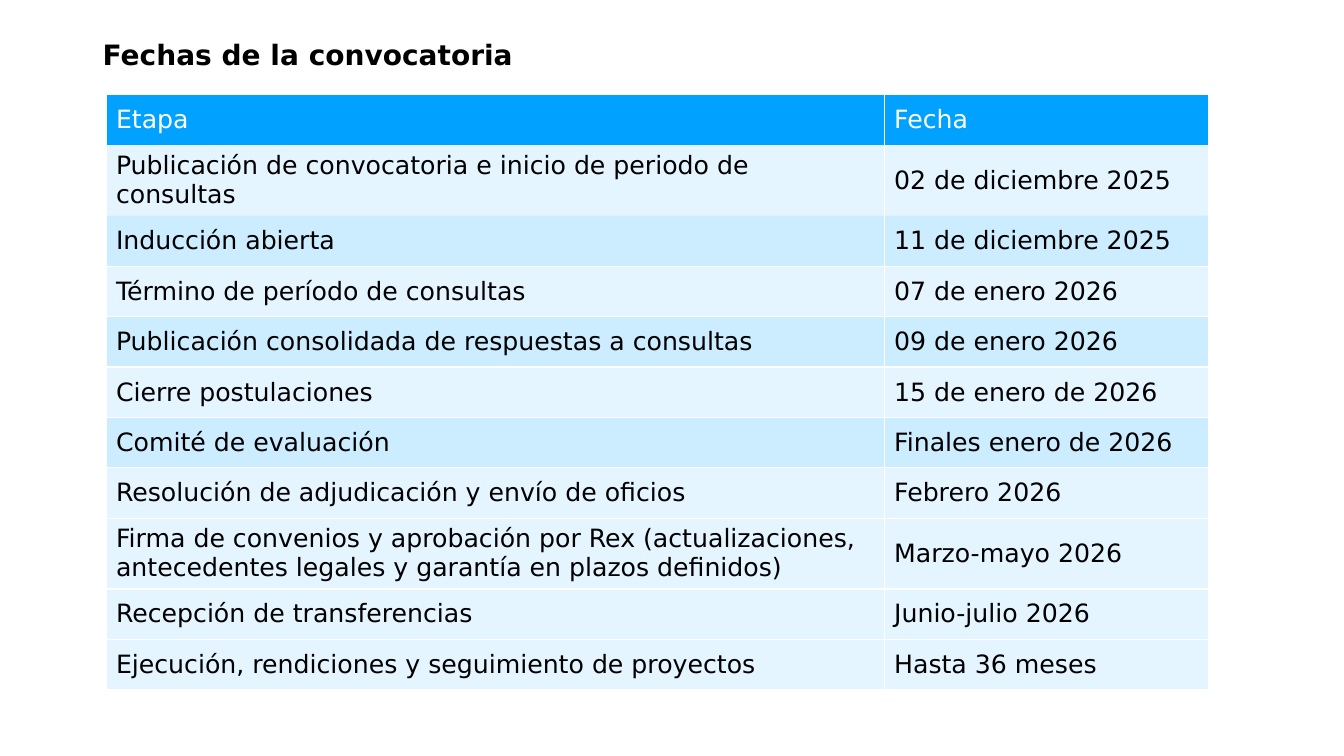
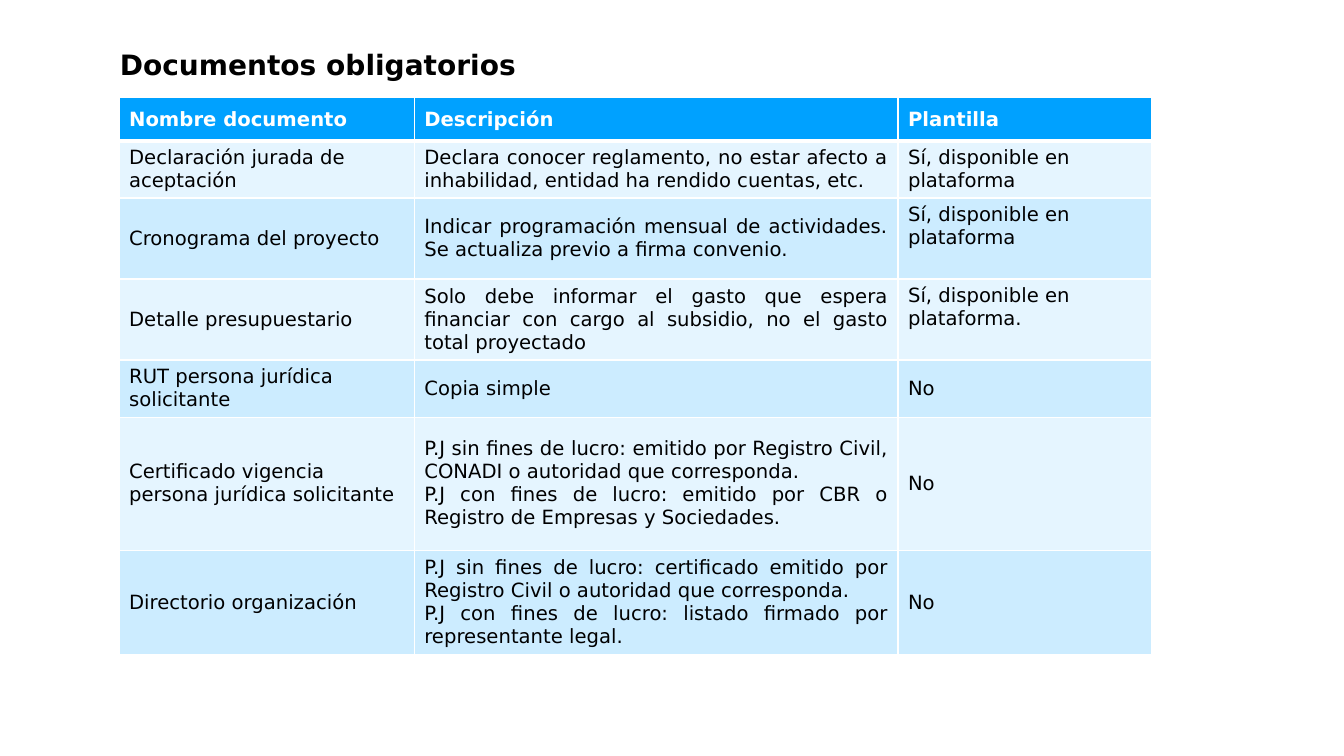
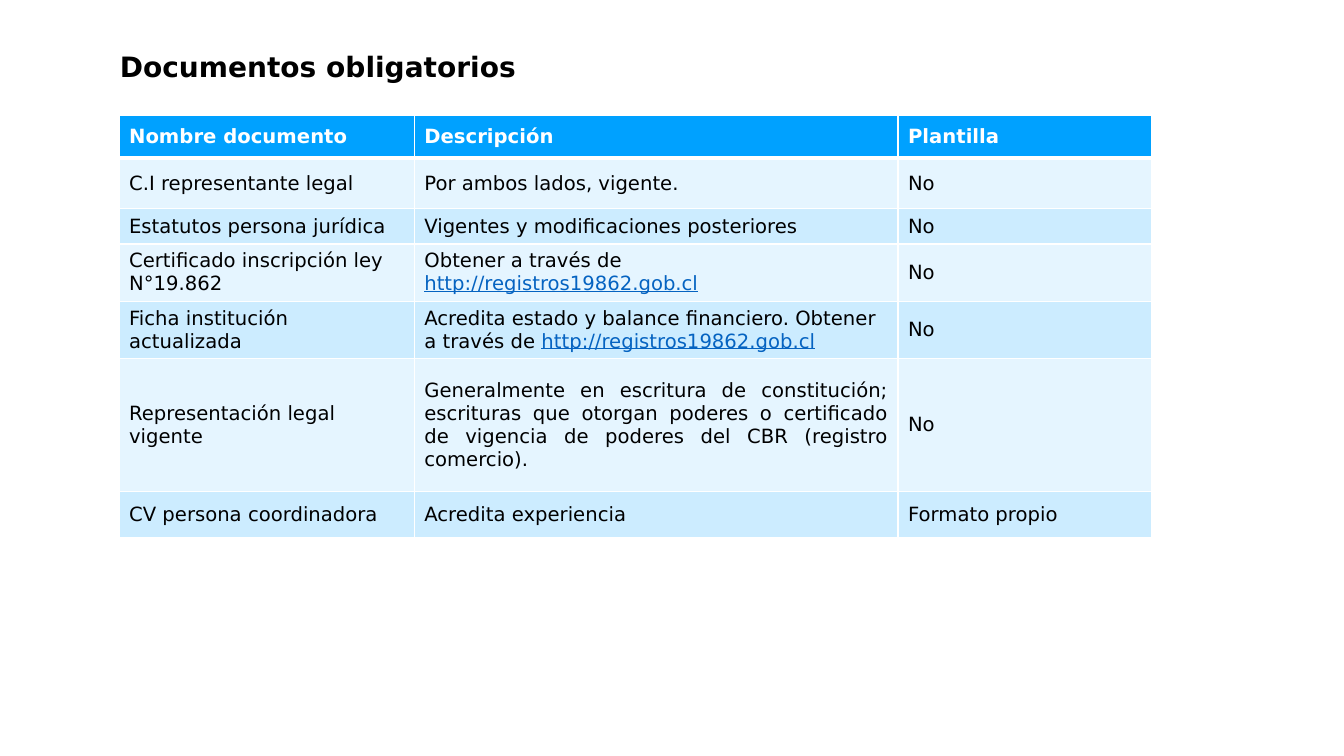
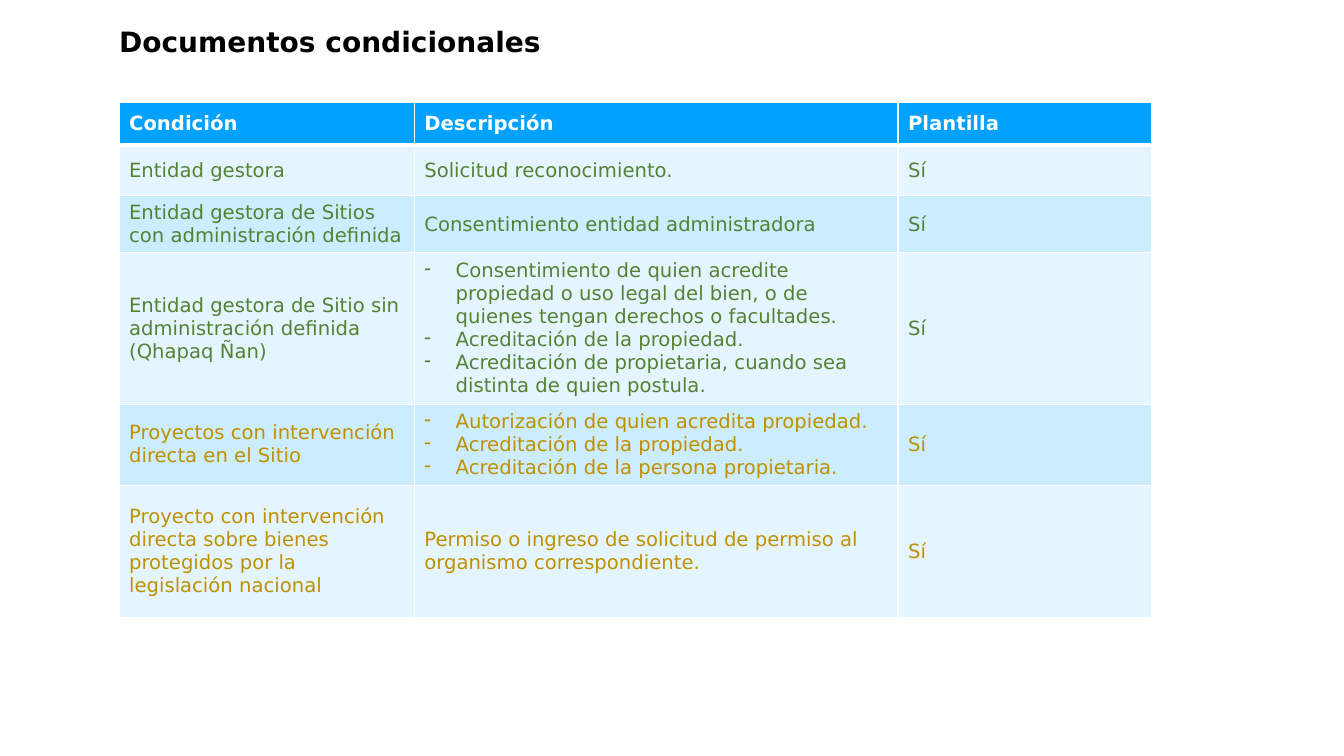
from lxml.etree import SubElement
from pptx import Presentation
from pptx.dml.color import RGBColor
from pptx.enum.text import MSO_ANCHOR, PP_ALIGN
from pptx.oxml import parse_xml
from pptx.oxml.ns import nsdecls, qn
from pptx.util import Cm, Pt

FONT = "DejaVu Sans"
BLACK = RGBColor(0x00, 0x00, 0x00)
WHITE = RGBColor(0xFF, 0xFF, 0xFF)
BLUE = RGBColor(0x00, 0xA1, 0xFF)
GREEN = RGBColor(0x54, 0x82, 0x35)
GOLD = RGBColor(0xBF, 0x90, 0x00)
LINK = RGBColor(0x05, 0x63, 0xC1)

PLAIN_STYLE = "{2D5ABB26-0587-4C30-8999-92F81FD0307C}"
DASH_INDENT = Cm(0.79)
PALE, STRONG = 10, 20  # opacity of the row tints, in percent

# Settings of the document tables; lengths in centimetres
DOCUMENTS = dict(
    title_left=3.02, table_left=3, columns=[7.44, 12.19, 6.38],
    size=14, header_bold=True, header_rule=3,
    strong_rows={2, 4, 6}, unruled_rows=(), justified_rows=(), top_rows=(),
    colors={},
)

# Content: a newline parts paragraphs, a tuple is a dashed list
SLIDES = [
    dict(
        DOCUMENTS,
        title="Fechas de la convocatoria",
        title_left=2.59, title_top=0.76,
        table_left=2.67, table_top=2.39, columns=[19.61, 8.18],
        heights=[1.27, 1.78] + [1.27] * 6 + [1.78, 1.27, 1.27],
        size=18, header_bold=False, header_rule=0, unruled_rows={1},
        rows=[
            ("Etapa", "Fecha"),
            ("Publicación de convocatoria e inicio de periodo de consultas",
             "02 de diciembre 2025"),
            ("Inducción abierta", "11 de diciembre 2025"),
            ("Término de período de consultas", "07 de enero 2026"),
            ("Publicación consolidada de respuestas a consultas",
             "09 de enero 2026"),
            ("Cierre postulaciones", "15 de enero de 2026"),
            ("Comité de evaluación", "Finales enero de 2026"),
            ("Resolución de adjudicación y envío de oficios", "Febrero 2026"),
            ("Firma de convenios y aprobación por Rex (actualizaciones, "
             "antecedentes legales y garantía en plazos definidos)",
             "Marzo-mayo 2026"),
            ("Recepción de transferencias", "Junio-julio 2026"),
            ("Ejecución, rendiciones y seguimiento de proyectos",
             "Hasta 36 meses"),
        ],
    ),
    dict(
        DOCUMENTS,
        title="Documentos obligatorios",
        title_top=0.99, table_top=2.46,
        heights=[1.09, 1.44, 2.04, 2.04, 1.44, 3.35, 2.62],
        justified_rows=range(1, 7), top_rows={2, 3},
        rows=[
            ("Nombre documento", "Descripción", "Plantilla"),
            ("Declaración jurada de aceptación",
             "Declara conocer reglamento, no estar afecto a inhabilidad, "
             "entidad ha rendido cuentas, etc.",
             "Sí, disponible en plataforma"),
            ("Cronograma del proyecto",
             "Indicar programación mensual de actividades. "
             "Se actualiza previo a firma convenio.",
             "Sí, disponible en plataforma"),
            ("Detalle presupuestario",
             "Solo debe informar el gasto que espera financiar con cargo "
             "al subsidio, no el gasto total proyectado",
             "Sí, disponible en plataforma."),
            ("RUT persona jurídica solicitante", "Copia simple", "No"),
            ("Certificado vigencia persona jurídica solicitante",
             "P.J sin fines de lucro: emitido por Registro Civil, CONADI "
             "o autoridad que corresponda.\n"
             "P.J con fines de lucro: emitido por CBR o Registro de "
             "Empresas y Sociedades.",
             "No"),
            ("Directorio organización",
             "P.J sin fines de lucro: certificado emitido por Registro "
             "Civil o autoridad que corresponda.\n"
             "P.J con fines de lucro: listado firmado por representante "
             "legal.",
             "No"),
        ],
    ),
    dict(
        DOCUMENTS,
        title="Documentos obligatorios",
        title_top=1.04, table_top=2.9,
        heights=[1.09, 1.27, 0.89, 1.44, 1.44, 3.35, 1.17],
        justified_rows={5},
        rows=[
            ("Nombre documento", "Descripción", "Plantilla"),
            ("C.I representante legal", "Por ambos lados, vigente.", "No"),
            ("Estatutos persona jurídica",
             "Vigentes y modificaciones posteriores", "No"),
            ("Certificado inscripción ley N°19.862",
             "Obtener a través de http://registros19862.gob.cl", "No"),
            ("Ficha institución actualizada",
             "Acredita estado y balance financiero. Obtener a través de "
             "http://registros19862.gob.cl",
             "No"),
            ("Representación legal vigente",
             "Generalmente en escritura de constitución; escrituras que "
             "otorgan poderes o certificado de vigencia de poderes del CBR "
             "(registro comercio).",
             "No"),
            ("CV persona coordinadora", "Acredita experiencia",
             "Formato propio"),
        ],
    ),
    dict(
        DOCUMENTS,
        title="Documentos condicionales",
        title_left=3, title_top=0.41, table_top=2.57,
        heights=[1.09, 1.27, 1.44, 3.81, 2.04, 3.35],
        colors={1: GREEN, 2: GREEN, 3: GREEN, 4: GOLD, 5: GOLD},
        rows=[
            ("Condición", "Descripción", "Plantilla"),
            ("Entidad gestora", "Solicitud reconocimiento.", "Sí"),
            ("Entidad gestora de Sitios con administración definida",
             "Consentimiento entidad administradora", "Sí"),
            ("Entidad gestora de Sitio sin administración definida "
             "(Qhapaq Ñan)",
             ("Consentimiento de quien acredite propiedad o uso legal del "
              "bien, o de quienes tengan derechos o facultades.",
              "Acreditación de la propiedad.",
              "Acreditación de propietaria, cuando sea distinta de quien "
              "postula."),
             "Sí"),
            ("Proyectos con intervención directa en el Sitio",
             ("Autorización de quien acredita propiedad.",
              "Acreditación de la propiedad.",
              "Acreditación de la persona propietaria."),
             "Sí"),
            ("Proyecto con intervención directa sobre bienes protegidos "
             "por la legislación nacional",
             "Permiso o ingreso de solicitud de permiso al organismo "
             "correspondiente.",
             "Sí"),
        ],
    ),
]


def write_text(frame, text, size, color=BLACK, bold=False,
               align=PP_ALIGN.LEFT, spacing=None):
    """Fill a text frame; web addresses take the link colour."""
    dashed = isinstance(text, tuple)
    for index, line in enumerate(text if dashed else text.split("\n")):
        paragraph = frame.add_paragraph() if index else frame.paragraphs[0]
        paragraph.alignment = align
        if spacing:
            paragraph.line_spacing = spacing
        if dashed:
            properties = paragraph._p.get_or_add_pPr()
            properties.set("marL", str(DASH_INDENT))
            properties.set("indent", str(-DASH_INDENT))
            SubElement(properties, qn("a:buChar")).set("char", "-")
        words, scheme, rest = line.partition("http://")
        for part, is_link in ((words, False), (scheme + rest, True)):
            if part:
                run = paragraph.add_run()
                run.text = part
                run.font.name, run.font.size = FONT, Pt(size)
                run.font.bold, run.font.underline = bold, is_link
                run.font.color.rgb = LINK if is_link else color


def style_cell(cell, opacity, top_rule, bottom_rule):
    """Tint a cell and rule its four sides in white."""
    cell.fill.solid()
    cell.fill.fore_color.rgb = BLUE
    properties = cell._tc.get_or_add_tcPr()
    if opacity < 100:
        tint = properties.find(qn("a:solidFill"))[0]
        SubElement(tint, qn("a:alpha")).set("val", str(opacity * 1000))
    rules = (("lnL", 1), ("lnR", 1), ("lnT", top_rule), ("lnB", bottom_rule))
    for position, (side, width) in enumerate(rules):
        paint = (f'<a:solidFill><a:srgbClr val="{WHITE}"/></a:solidFill>'
                 if width else "<a:noFill/>")
        properties.insert(position, parse_xml(
            f'<a:{side} {nsdecls("a")} w="{Pt(width)}">{paint}</a:{side}>'))


def add_title(slide, content, slide_width):
    left = Cm(content["title_left"])
    frame = slide.shapes.add_textbox(
        left, Cm(content["title_top"]), slide_width - left, Cm(1.35)).text_frame
    frame.word_wrap = True
    frame.vertical_anchor = MSO_ANCHOR.MIDDLE
    frame.margin_left = frame.margin_right = 0
    frame.margin_top = frame.margin_bottom = 0
    write_text(frame, content["title"], 20, bold=True, spacing=0.9)


def add_schedule(slide, content):
    rows, columns, heights = (content[k] for k in ("rows", "columns", "heights"))
    table = slide.shapes.add_table(
        len(rows), len(columns), Cm(content["table_left"]),
        Cm(content["table_top"]), Cm(sum(columns)), Cm(sum(heights))).table
    table.first_row = table.horz_banding = False
    table._tbl.tblPr.find(qn("a:tableStyleId")).text = PLAIN_STYLE
    for column, width in zip(table.columns, columns):
        column.width = Cm(width)

    # Width of the rule below each row
    rules = [0 if r in content["unruled_rows"] else 1 for r in range(len(rows))]
    rules[0] = content["header_rule"]

    for r, (row, height) in enumerate(zip(rows, heights)):
        table.rows[r].height = Cm(height)
        header = r == 0
        opacity = (100 if header
                   else STRONG if r in content["strong_rows"] else PALE)
        color = WHITE if header else content["colors"].get(r, BLACK)
        for c, text in enumerate(row):
            cell = table.cell(r, c)
            on_top = c == 2 and r in content["top_rows"]
            justified = c == 1 and r in content["justified_rows"]
            cell.vertical_anchor = MSO_ANCHOR.TOP if on_top else MSO_ANCHOR.MIDDLE
            write_text(cell.text_frame, text, content["size"], color=color,
                       bold=header and content["header_bold"],
                       align=PP_ALIGN.JUSTIFY if justified else PP_ALIGN.LEFT)
            style_cell(cell, opacity, rules[r - 1] if r else 1, rules[r])


def main():
    deck = Presentation()
    deck.slide_width, deck.slide_height = Cm(33.87), Cm(19.05)
    for content in SLIDES:
        slide = deck.slides.add_slide(deck.slide_layouts[6])
        add_title(slide, content, deck.slide_width)
        add_schedule(slide, content)
    deck.save("out.pptx")


if __name__ == "__main__":
    main()
